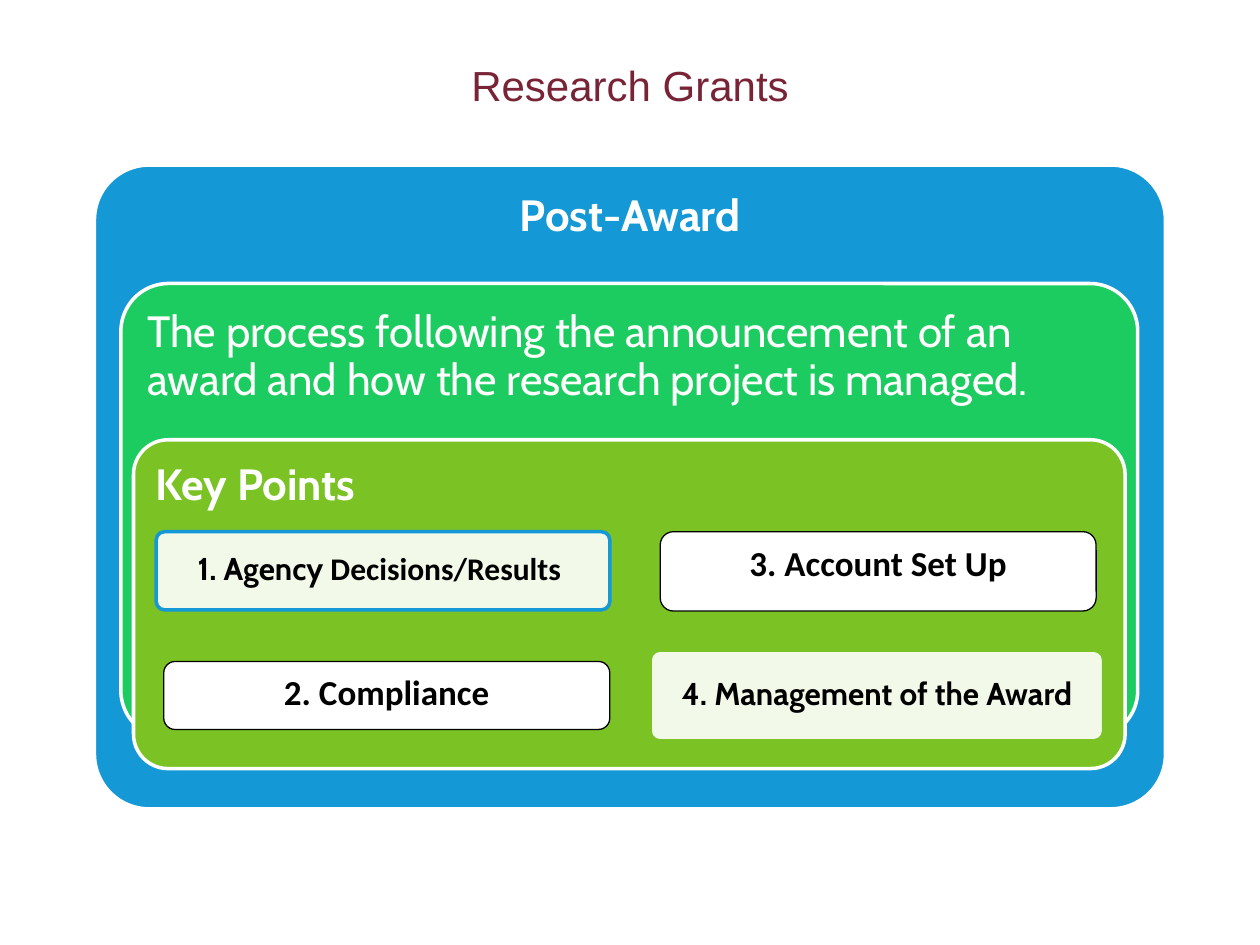
from lxml import etree
from pptx import Presentation
from pptx.dml.color import RGBColor
from pptx.enum import shapes, text
from pptx.oxml import ns
from pptx.util import Inches, Pt

COLORS = {"maroon": "782336", "blue": "1598D6", "green": "1DCC60",
          "lime": "7BC224", "white": "FFFFFF", "black": "000000"}
LEFT, CENTER = text.PP_ALIGN.LEFT, text.PP_ALIGN.CENTER
TOP, MIDDLE = text.MSO_ANCHOR.TOP, text.MSO_ANCHOR.MIDDLE


def rgb(name):
    return RGBColor.from_string(COLORS[name])


def write(tf, runs, size, color, bold, align, anchor, inset, spacing):
    """Fill a text frame with one paragraph of (text, font) runs."""
    tf.word_wrap = True
    tf.vertical_anchor = anchor
    for side in ("left", "top", "right", "bottom"):
        setattr(tf, f"margin_{side}", Inches(inset))
    p = tf.paragraphs[0]
    p.alignment, p.line_spacing = align, spacing
    for words, font in runs:
        r = p.add_run()
        r.text = words
        for key, value in {"name": font, "size": Pt(size), "bold": bold}.items():
            setattr(r.font, key, value)
        r.font.color.rgb = rgb(color)


prs = Presentation()
prs.slide_width, prs.slide_height = Inches(10), Inches(7.5)
s = prs.slides.add_slide(prs.slide_layouts[5])

title = s.shapes.title
title.left, title.top = Inches(0.75), Inches(0.42)
title.width, title.height = Inches(8.5), Inches(1.21)
write(title.text_frame, [("Research Grants", "Arial")], 24, "maroon", False,
      CENTER, TOP, 0.05, 1.0)

# Formats shared by the nested panels and the two styles of key point
panel = dict(line="white", width=2, alpha=100, size=25, color="white",
             anchor=TOP, inset=0.1, spacing=0.9)
tinted = dict(fill="white", width=2, alpha=90, size=18, color="black", bold=True,
              align=CENTER, anchor=MIDDLE, inset=0.07, spacing=0.9, adj=0.105)
plain = dict(fill="white", line="black", width=0.75, alpha=100, size=20,
             color="black", bold=True, align=CENTER, anchor=TOP, inset=0.05,
             spacing=1.0, adj=0.167)

boxes = [
    ((0.75, 1.31, 8.5, 5.11), [("Post-Award", "Cabin")],
     panel | dict(fill="blue", adj=0.085, bold=True, align=CENTER)),
    ((0.96, 2.25, 8.07, 3.61),
     [("The process following the announcement of an award and how the "
       "research project is managed.", "Cabin")],
     panel | dict(fill="green", adj=0.105, bold=False, align=LEFT)),
    ((1.06, 3.49, 7.87, 2.61), [("Key Points", "Cabin")],
     panel | dict(fill="lime", adj=0.105, bold=True, align=LEFT)),
    ((1.24, 4.22, 3.6, 0.62),
     [("1. Agency ", "Cabin"), ("Decisions/Results ", "Calibri")],
     tinted | dict(line="blue")),
    ((5.16, 5.16, 3.6, 0.72), [("4. Management of the Award", "Cabin")],
     tinted | dict(line="lime")),
    ((1.3, 5.25, 3.54, 0.54), [("2. Compliance", "Calibri")], plain),
    ((5.24, 4.22, 3.46, 0.63), [("3. Account Set Up", "Calibri")], plain),
]

for place, runs, fmt in boxes:
    sp = s.shapes.add_shape(shapes.MSO_SHAPE.ROUNDED_RECTANGLE,
                            *(Inches(v) for v in place))
    sp.adjustments[0] = fmt["adj"]
    sp.shadow.inherit = False
    sp.fill.solid()
    sp.fill.fore_color.rgb = rgb(fmt["fill"])
    if fmt["alpha"] < 100:
        fill_color = sp._element.spPr.find(ns.qn("a:solidFill"))[0]
        etree.SubElement(fill_color, ns.qn("a:alpha"), val=str(fmt["alpha"] * 1000))
    sp.line.color.rgb = rgb(fmt["line"])
    sp.line.width = Pt(fmt["width"])
    write(sp.text_frame, runs, *(fmt[key] for key in (
        "size", "color", "bold", "align", "anchor", "inset", "spacing")))

prs.save("out.pptx")
